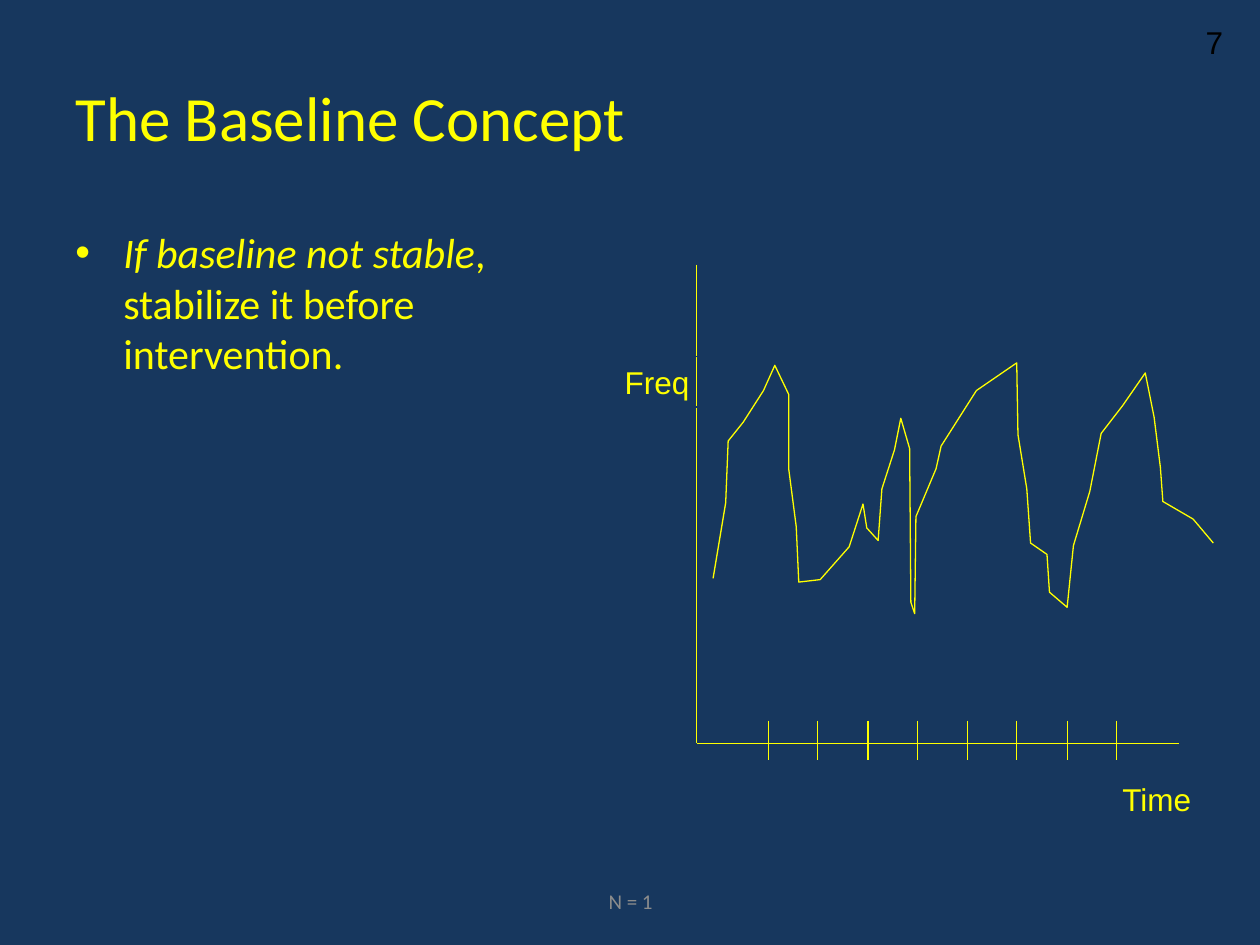
from lxml import etree
from pptx import Presentation
from pptx import util as u
from pptx.dml.color import RGBColor
from pptx.enum import shapes, text
from pptx.oxml.ns import qn

PX = u.Inches(1) // 100  # 100 px to the inch
COLORS = {"navy": "17375E", "yellow": "FFFF00", "gray": "8C8C8C", "black": "000000"}


def write_text(shape, words, size=18, font="Arial", color="yellow", italic=False,
               align=text.PP_ALIGN.LEFT, anchor=text.MSO_ANCHOR.TOP, wrap=True):
    """Append a formatted run to the first paragraph of a shape."""
    frame = shape.text_frame
    frame.word_wrap = wrap
    frame.vertical_anchor = anchor
    paragraph = frame.paragraphs[0]
    paragraph.alignment = align
    run = paragraph.add_run()
    run.text = words
    run.font.size = u.Pt(size)
    run.font.name = font
    run.font.italic = italic
    run.font.color.rgb = RGBColor.from_string(COLORS[color])
    return paragraph


def draw_line(slide, x1, y1, x2, y2):
    line = slide.shapes.add_connector(
        shapes.MSO_CONNECTOR.STRAIGHT, x1 * PX, y1 * PX, x2 * PX, y2 * PX)
    line.line.color.rgb = RGBColor.from_string(COLORS["yellow"])
    line.line.width = u.Pt(0.75)
    etree.SubElement(line._element.spPr, qn("a:effectLst"))


presentation = Presentation()
presentation.slide_width, presentation.slide_height = 1000 * PX, 750 * PX
slide = presentation.slides.add_slide(presentation.slide_layouts[5])
slide.background.fill.solid()
slide.background.fill.fore_color.rgb = RGBColor.from_string(COLORS["navy"])

# Title
title = slide.shapes.title
title.left, title.top, title.width, title.height = 50 * PX, 30 * PX, 900 * PX, 125 * PX
write_text(title, "The Baseline Concept", size=36, font="Calibri",
           anchor=text.MSO_ANCHOR.MIDDLE)

# Bulleted body
body = slide.shapes.add_textbox(50 * PX, 175 * PX, 442 * PX, 495 * PX)
write_text(body, "If baseline not stable", size=24, font="Calibri", italic=True)
paragraph = write_text(body, ", stabilize it before intervention.", size=24, font="Calibri")
paragraph.space_before = u.Pt(5)
properties = paragraph._p.get_or_add_pPr()
properties.set("marL", str(38 * PX))
properties.set("indent", str(-38 * PX))
etree.SubElement(properties, qn("a:buFont")).set("typeface", "Arial")
etree.SubElement(properties, qn("a:buChar")).set("char", "•")

# Slide number and footer
number = slide.shapes.add_textbox(947 * PX, 13 * PX, 51 * PX, 40 * PX)
write_text(number, "7", color="black", wrap=False)
footer = slide.shapes.add_textbox(342 * PX, 695 * PX, 317 * PX, 40 * PX)
write_text(footer, "N = 1", size=12, font="Calibri", color="gray",
           align=text.PP_ALIGN.CENTER, anchor=text.MSO_ANCHOR.MIDDLE)

# Axes
draw_line(slide, 553, 210, 553, 590)
draw_line(slide, 553, 590, 936, 590)

# Axis labels, outlined in the background colour
for label, left, top, width in [("Freq", 486, 283, 72), ("Time", 881, 614, 76)]:
    box = slide.shapes.add_textbox(left * PX, top * PX, width * PX, 40 * PX)
    box.line.color.rgb = RGBColor.from_string(COLORS["navy"])
    box.line.width = u.Pt(0.75)
    write_text(box, label, wrap=False)

# Time ticks
for tick in range(8):
    x = round(610 + tick * 276 / 7)
    draw_line(slide, x, 572, x, 603)

# Unstable baseline, through its peaks, troughs and bends
bends = [
    (566, 459), (576, 399), (578, 350), (590, 335), (606, 310), (615, 290),
    (626, 313), (626, 372), (632, 418), (634, 462), (651, 460), (674, 434),
    (685, 400), (688, 419), (697, 429), (700, 388), (710, 357), (715, 332),
    (722, 356), (723, 478), (726, 487), (727, 410), (743, 372), (747, 354),
    (775, 310), (807, 288), (808, 345), (815, 388), (818, 431), (831, 440),
    (833, 470), (847, 482), (852, 433), (865, 390), (874, 344), (891, 322),
    (909, 296), (916, 331), (921, 371), (923, 398), (947, 412), (963, 431),
]
builder = slide.shapes.build_freeform(*bends[0], scale=PX)
builder.add_line_segments(bends[1:], close=False)
curve = builder.convert_to_shape()
curve.shadow.inherit = False
curve.fill.background()
curve.line.color.rgb = RGBColor.from_string(COLORS["yellow"])
curve.line.width = u.Pt(0.75)

presentation.save("out.pptx")
